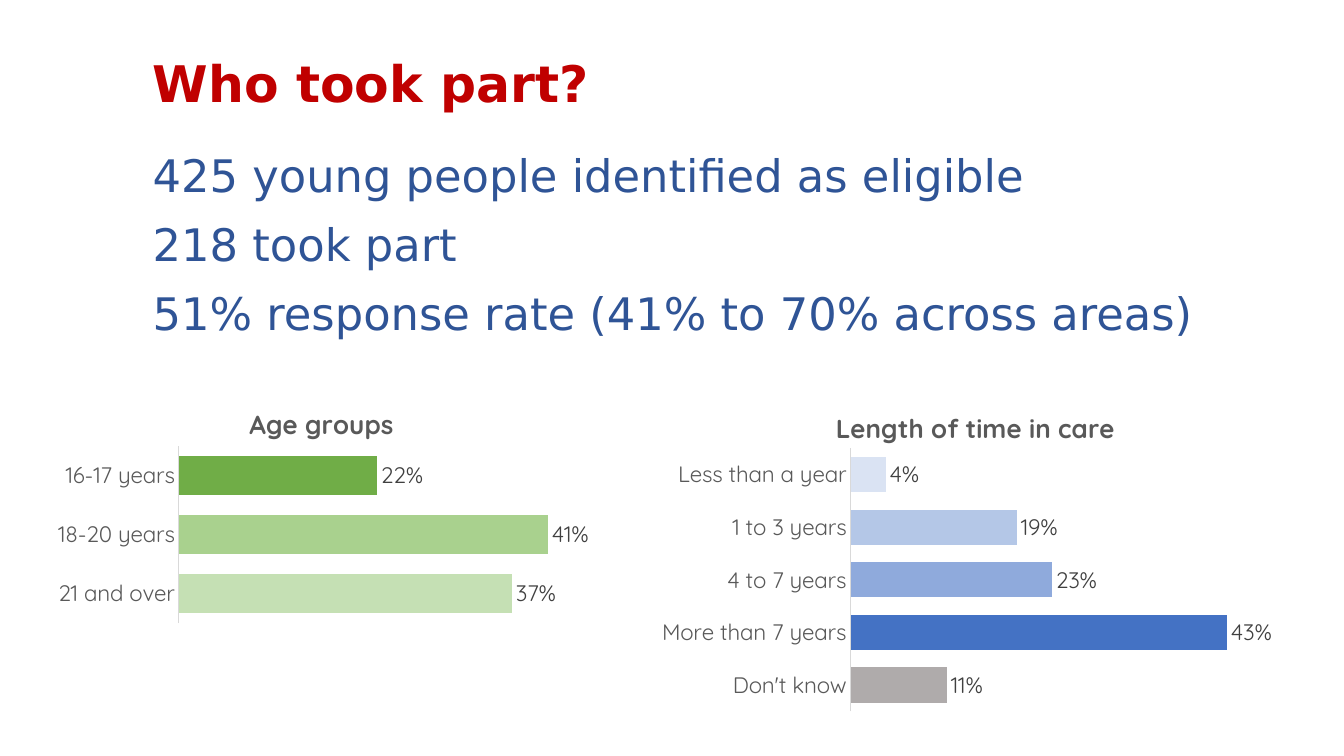
import pptx
import pptx.util
import pptx.dml.color
import pptx.chart.data
import pptx.enum.chart
import pptx.oxml
import pptx.oxml.ns

Pt = pptx.util.Pt
enum = pptx.enum.chart


def color(code):
    return pptx.dml.color.RGBColor.from_string(code)


def write(frame, text, font, size, code, bold=False, line=1, after=0):
    for i, row in enumerate(text.split("\n")):
        par = frame.add_paragraph() if i else frame.paragraphs[0]
        par.line_spacing = line
        par.space_after = Pt(after)
        run = par.add_run()
        run.text = row
        run.font.name = font
        run.font.size = Pt(size)
        run.font.bold = bold
        run.font.color.rgb = color(code)


deck = pptx.Presentation()
deck.slide_width, deck.slide_height = Pt(960), Pt(540)
slide = deck.slides.add_slide(deck.slide_layouts[6])

facts = """425 young people identified as eligible
218 took part
51% response rate (41% to 70% across areas)"""
texts = [
    ((102, 34, 660, 51), "Who took part?", dict(size=36, code="C00000", bold=True)),
    ((102, 99.5, 827, 144), facts, dict(size=32, code="2F5496", line=1.07, after=8)),
]
for place, text, style in texts:
    box = slide.shapes.add_textbox(*map(Pt, place))
    box.text_frame.word_wrap = True
    write(box.text_frame, text, "DejaVu Sans", **style)

charts = [
    dict(
        title="Age groups", place=(34, 272, 391, 178.5), top=0.45,
        head=dict(x=0.36, y=0.08), plot=dict(x=0.24, y=0.26, w=0.74, h=0.71),
        bars=[("16-17 years", 0.22, "70AD47"), ("18-20 years", 0.41, "A9D18E"),
              ("21 and over", 0.37, "C5E0B4")],
    ),
    dict(
        title="Length of time in care", place=(463, 272, 466.5, 241), top=0.5,
        head=dict(x=0.28, y=0.07), plot=dict(x=0.31, y=0.2, w=0.67, h=0.78),
        bars=[("Less than a year", 0.04, "DAE3F3"), ("1 to 3 years", 0.19, "B4C7E7"),
              ("4 to 7 years", 0.23, "8FAADC"), ("More than 7 years", 0.43, "4472C4"),
              ("Don't know", 0.11, "AFABAB")],
    ),
]
for item in charts:
    names, vals, fills = zip(*item["bars"])
    data = pptx.chart.data.CategoryChartData(number_format="0%")
    data.categories = names
    data.add_series("Series 1", vals)
    chart = slide.shapes.add_chart(
        enum.XL_CHART_TYPE.BAR_CLUSTERED, *map(Pt, item["place"]), data).chart
    chart.has_legend = False
    chart.font.name = "Quicksand"
    chart.font.size = Pt(16)
    chart.font.color.rgb = color("000000")
    write(chart.chart_title.text_frame, item["title"], "Quicksand", 18.6, "595959", bold=True)
    chart.chart_title.include_in_layout = False

    cat = chart.category_axis
    cat.reverse_order = True
    cat.major_tick_mark = enum.XL_TICK_MARK.NONE
    cat.format.line.color.rgb = color("D9D9D9")
    cat.format.line.width = Pt(0.75)
    cat.tick_labels.font.name = "Quicksand"
    cat.tick_labels.font.size = Pt(16)
    cat.tick_labels.font.color.rgb = color("595959")
    axis = chart.value_axis
    axis.minimum_scale, axis.maximum_scale = 0, item["top"]
    axis.has_major_gridlines = False
    axis.visible = False

    plot = chart.plots[0]
    plot.gap_width = 50
    plot.vary_by_categories = False
    bars = plot.series[0]
    bars.format.fill.solid()
    bars.format.fill.fore_color.rgb = color("4472C4")
    for i, code in enumerate(fills):
        fill = bars.points[i].format.fill
        fill.solid()
        fill.fore_color.rgb = color(code)
    labels = bars.data_labels
    labels.show_value = True
    labels.number_format = "0%"
    labels.number_format_is_linked = False
    labels.position = enum.XL_LABEL_POSITION.OUTSIDE_END
    labels.font.name = "Quicksand"
    labels.font.size = Pt(16)
    labels.font.color.rgb = color("404040")

    root = chart.element
    for tag, spot in (("c:title", item["head"]), ("c:plotArea", item["plot"])):
        node = root.find(".//" + pptx.oxml.ns.qn(tag))
        for old in node.findall(pptx.oxml.ns.qn("c:layout")):
            node.remove(old)
        inner = '<c:layoutTarget val="inner"/>' if "w" in spot else ""
        modes = "".join(f'<c:{key}Mode val="edge"/>' for key in "xy")
        sides = "".join(f'<c:{key} val="{val}"/>' for key, val in spot.items())
        layout = pptx.oxml.parse_xml(
            f'<c:layout {pptx.oxml.ns.nsdecls("c")}><c:manualLayout>'
            f'{inner}{modes}{sides}</c:manualLayout></c:layout>')
        node.insert(1 if tag == "c:title" else 0, layout)

deck.save("out.pptx")
